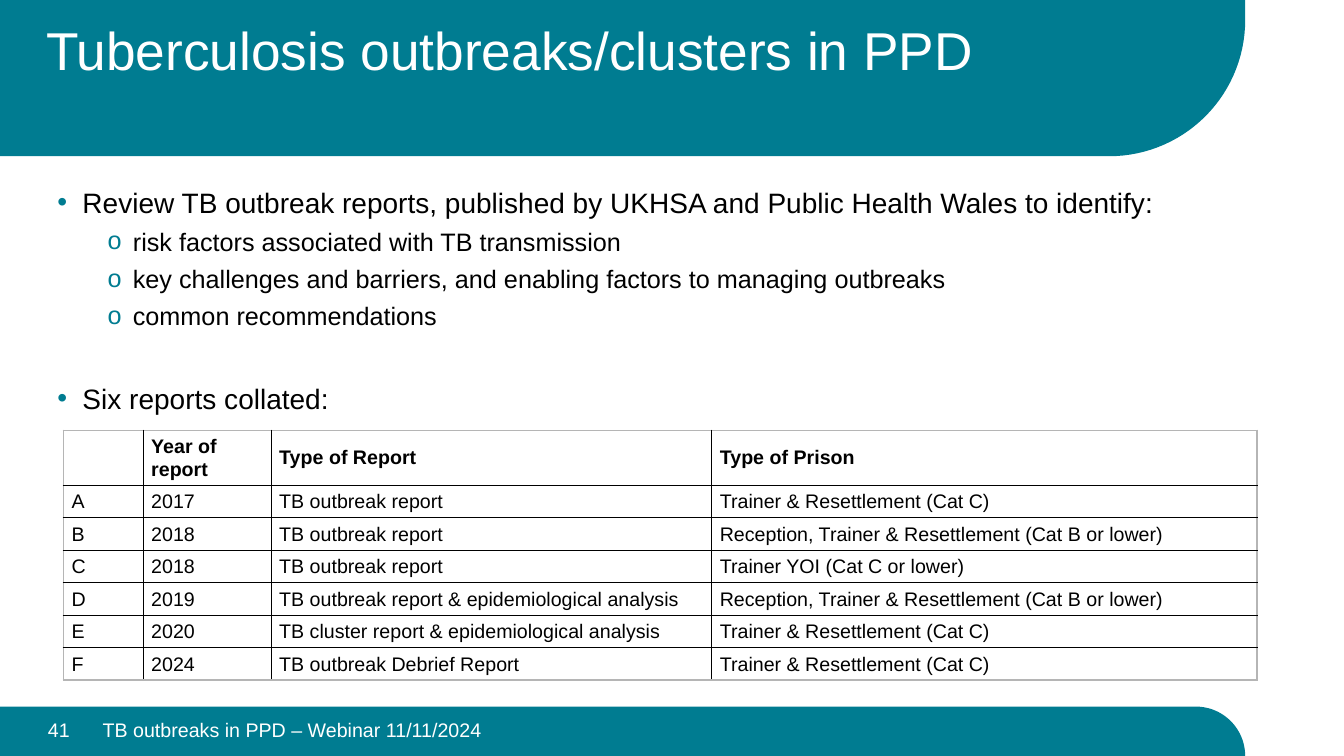
from math import cos, pi, sin

from lxml.etree import SubElement
from pptx import Presentation
from pptx.dml.color import RGBColor
from pptx.enum.text import MSO_ANCHOR as Anchor, PP_ALIGN as Align
from pptx.oxml import parse_xml
from pptx.oxml.ns import nsdecls, qn
from pptx.util import Inches, Pt

TEAL, WHITE, BLACK, GREY = "007C91", "FFFFFF", "000000", "B5B5B5"


def tint(color, value):
    color.rgb = RGBColor.from_string(value)


def write(par, text, size, color=BLACK, bold=False):
    """Add one run of Arial to a paragraph."""
    run = par.add_run()
    run.text = text
    run.font.name = "Arial"
    run.font.size = Pt(size)
    run.font.bold = bold
    tint(run.font.color, color)


prs = Presentation()
prs.slide_width, prs.slide_height = Inches(13.33), Inches(7.5)
slide = prs.slides.add_slide(prs.slide_layouts[6])
shapes = slide.shapes

# Teal bands: a straight left side and one round corner on the right
right = 12.35
bands = [
    (7.5, 7.01, 0.49, -1),
    (0, 1.55, 1.35, 1),
]
for flat, curved, rad, side in bands:
    mid = curved - side * rad
    points = [(right, flat)] if mid != flat else []
    for step in range(31):
        turn = step / 30 * pi / 2
        points.append((right - rad + rad * cos(turn), mid + side * rad * sin(turn)))
    points.append((0, curved))
    band = shapes.build_freeform(0, Inches(flat))
    band.add_line_segments([(Inches(x), Inches(y)) for x, y in points])
    shape = band.convert_to_shape()
    shape.shadow.inherit = False
    shape.fill.solid()
    tint(shape.fill.fore_color, TEAL)
    shape.line.fill.background()

# Title, footer and page number
labels = [
    ("Tuberculosis outbreaks/clusters in PPD", 0.36, 0.19, 11.5, 1.06,
     38, Anchor.TOP, Align.LEFT, 0.9),
    ("TB outbreaks in PPD – Webinar 11/11/2024", 0.92, 7.04, 10.94, 0.4,
     14, Anchor.MIDDLE, Align.LEFT, 1.0),
    ("41", 0.14, 7.04, 0.65, 0.4, 14, Anchor.MIDDLE, Align.RIGHT, 1.0),
]
for text, x, y, wide, high, size, anchor, align, lead in labels:
    frame = shapes.add_textbox(
        Inches(x), Inches(y), Inches(wide), Inches(high)).text_frame
    frame.word_wrap = True
    frame.vertical_anchor = anchor
    par = frame.paragraphs[0]
    par.alignment = align
    par.line_spacing = lead
    write(par, text, size, WHITE)

# Bullets: text, level, space before
bullets = [
    ("Review TB outbreak reports, published by UKHSA and Public Health Wales to identify:", 0, 0),
    ("risk factors associated with TB transmission", 1, 5),
    ("key challenges and barriers, and enabling factors to managing outbreaks", 1, 5),
    ("common recommendations", 1, 5),
    ("Six reports collated:", 0, 36),
]
frame = shapes.add_textbox(
    Inches(0.47), Inches(1.79), Inches(12.17), Inches(2.45)).text_frame
frame.word_wrap = True
for index, (text, level, gap) in enumerate(bullets):
    par = frame.add_paragraph() if index else frame.paragraphs[0]
    par.level = level
    par.space_before = Pt(gap)
    props = par._p.get_or_add_pPr()
    props.set("marL", str(Inches(0.25 + 0.5 * level)))
    props.set("indent", str(Inches(-0.25)))
    color = SubElement(props, qn("a:buClr"))
    SubElement(color, qn("a:srgbClr"), val=TEAL)
    SubElement(props, qn("a:buFont"), typeface="Arial")
    SubElement(props, qn("a:buChar"), char="•o"[level])
    write(par, text, 20 - 2 * level)

# Table of reports
rows = [
    ("", "Year of report", "Type of Report", "Type of Prison"),
    ("A", "2017", "TB outbreak report", "Trainer & Resettlement (Cat C)"),
    ("B", "2018", "TB outbreak report",
     "Reception, Trainer & Resettlement (Cat B or lower)"),
    ("C", "2018", "TB outbreak report", "Trainer YOI (Cat C or lower)"),
    ("D", "2019", "TB outbreak report & epidemiological analysis",
     "Reception, Trainer & Resettlement (Cat B or lower)"),
    ("E", "2020", "TB cluster report & epidemiological analysis",
     "Trainer & Resettlement (Cat C)"),
    ("F", "2024", "TB outbreak Debrief Report", "Trainer & Resettlement (Cat C)"),
]
widths = [0.79, 1.27, 4.37, 5.41]
table = shapes.add_table(
    len(rows), len(widths), Inches(0.63), Inches(4.27),
    Inches(sum(widths)), Inches(2.48)).table
table.first_row = table.horz_banding = False
for col, wide in zip(table.columns, widths):
    col.width = Inches(wide)
for r, row in enumerate(rows):
    table.rows[r].height = Inches(0.32 if r else 0.54)
    for c, text in enumerate(row):
        cell = table.cell(r, c)
        cell.fill.solid()
        tint(cell.fill.fore_color, WHITE)
        cell.vertical_anchor = Anchor.MIDDLE
        cell.margin_left = cell.margin_right = Inches(0.08)
        cell.margin_top = cell.margin_bottom = Inches(0.05)
        if text:
            par = cell.text_frame.paragraphs[0]
            par.line_spacing = Pt(16)
            write(par, text, 14, bold=r == 0)
        outer = {
            "L": c == 0, "R": c == len(widths) - 1,
            "T": r == 0, "B": r == len(rows) - 1,
        }
        props = cell._tc.get_or_add_tcPr()
        for place, (edge, rim) in enumerate(outer.items()):
            color, width = (GREY, Pt(1.5)) if rim else (BLACK, Pt(1))
            props.insert(place, parse_xml(
                f'<a:ln{edge} {nsdecls("a")} w="{width}"><a:solidFill>'
                f'<a:srgbClr val="{color}"/></a:solidFill></a:ln{edge}>'))

prs.save("out.pptx")
